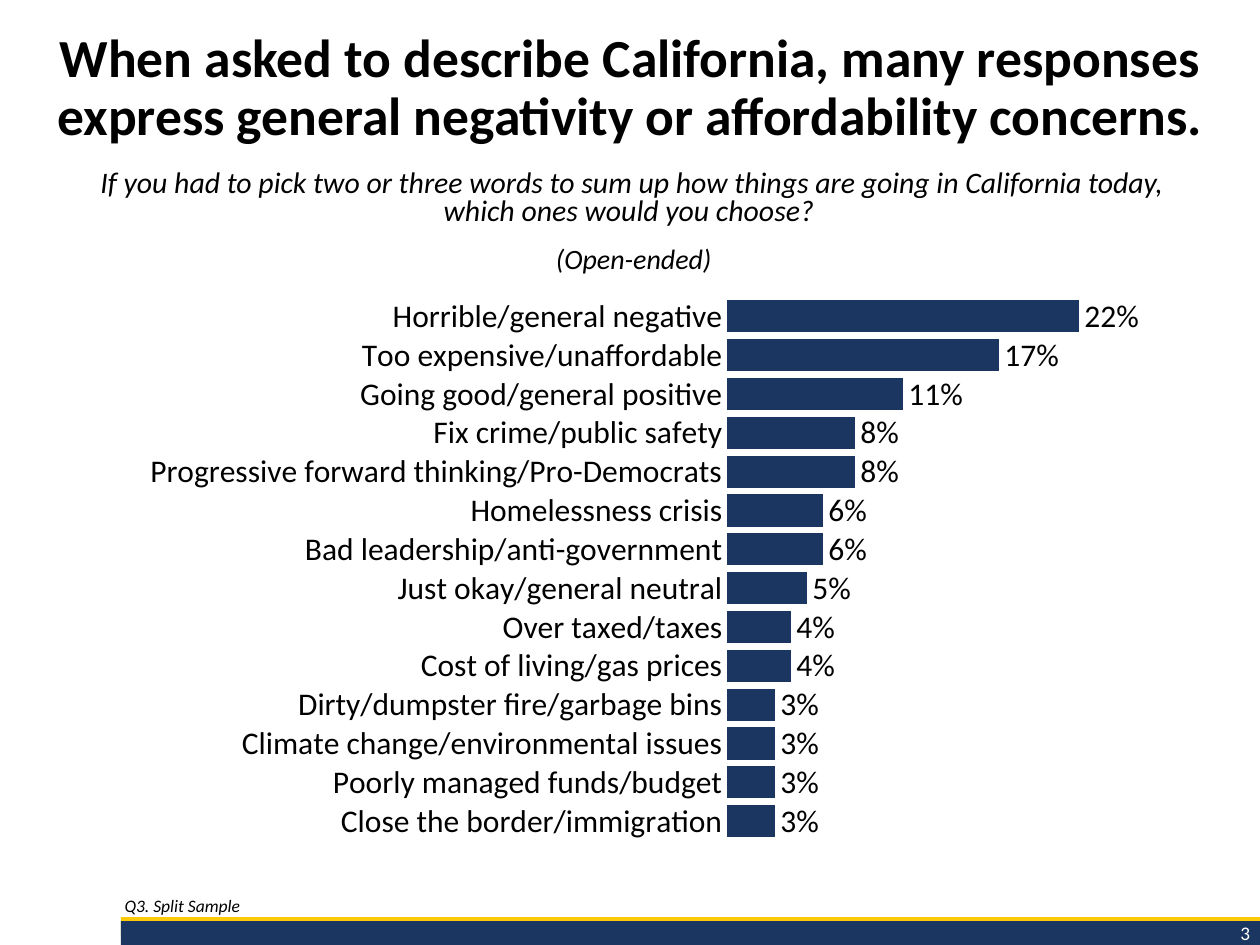
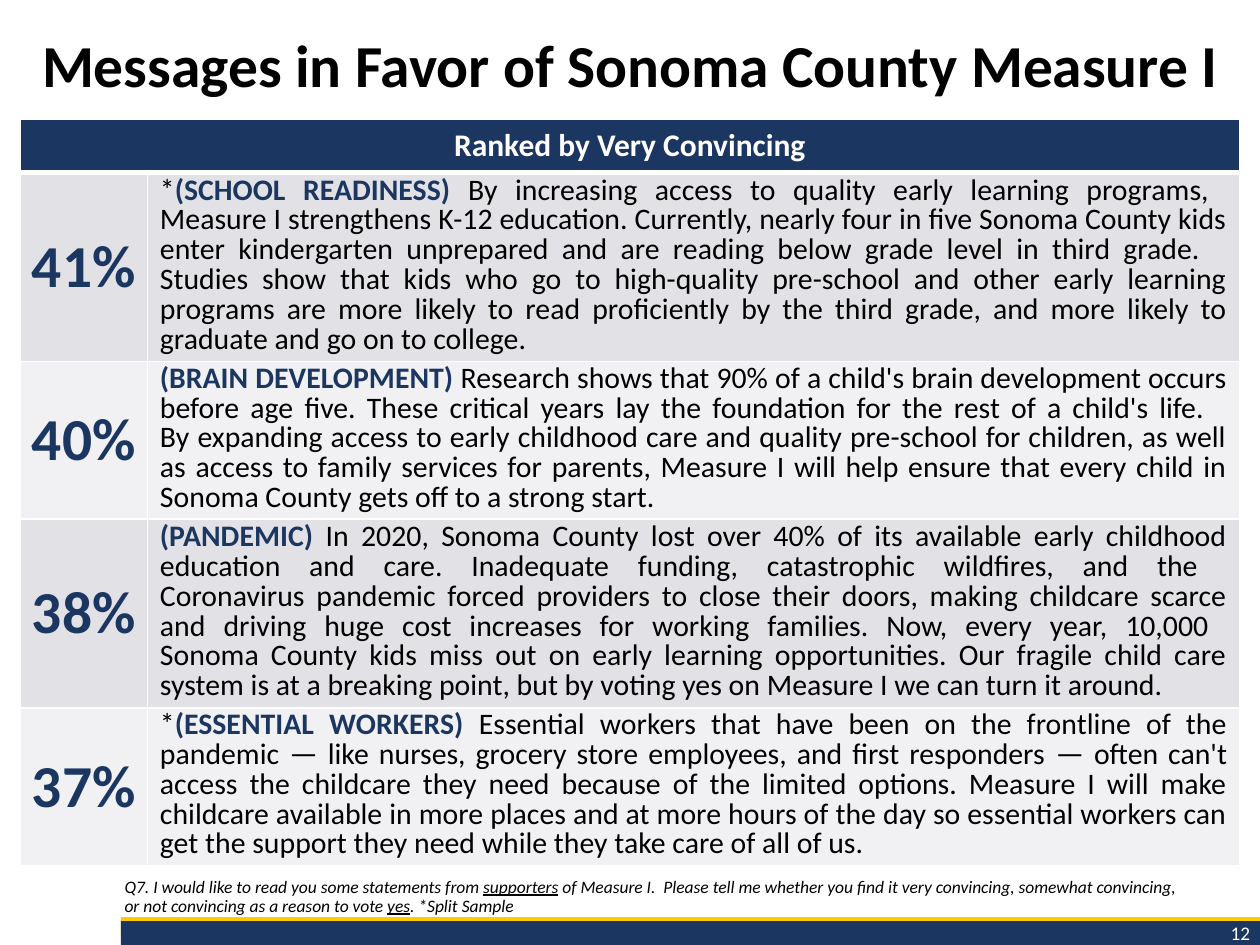
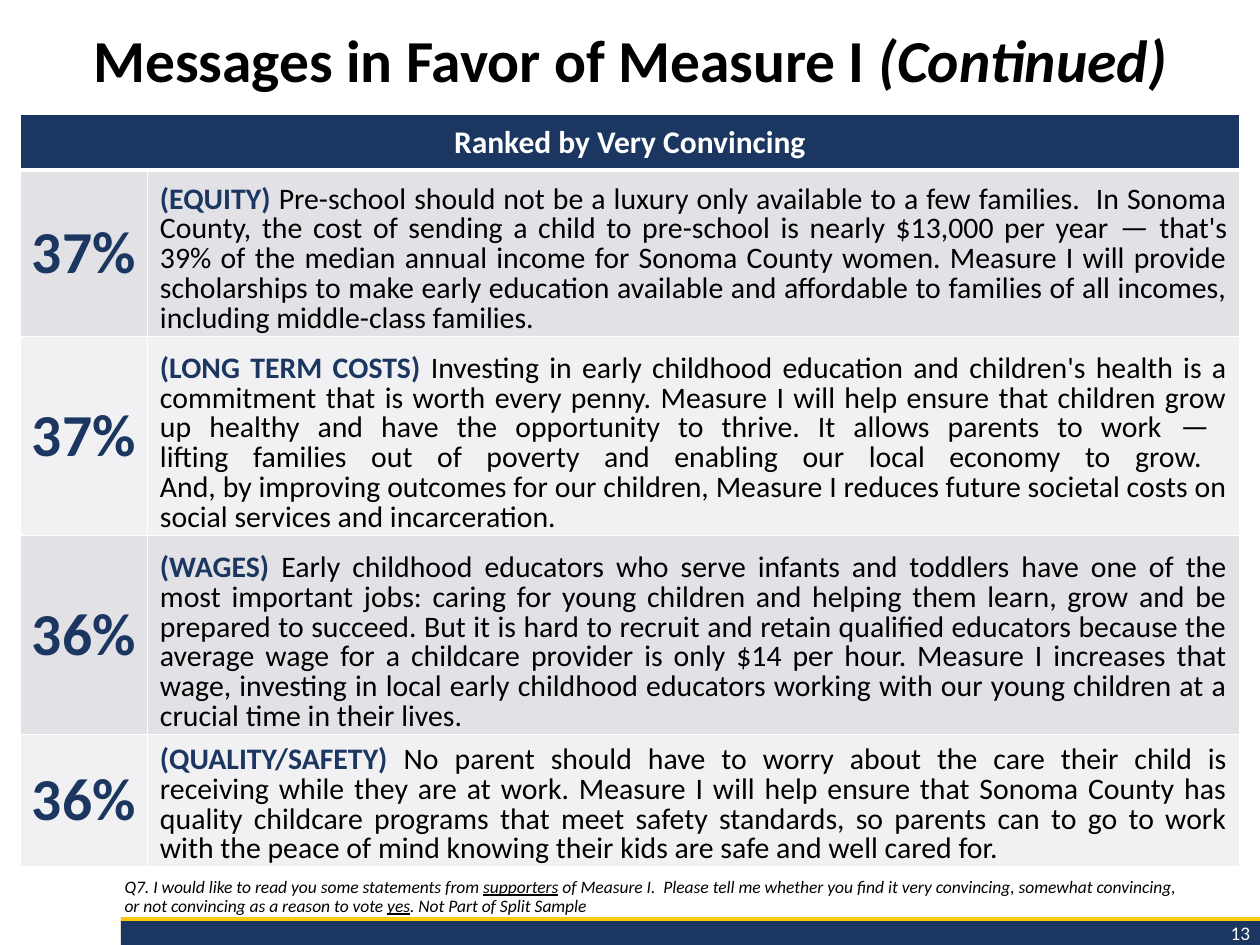
import lxml.etree
import pptx
import pptx.chart.data
import pptx.dml.color
import pptx.enum.chart
import pptx.enum.shapes
import pptx.enum.text
import pptx.oxml.ns
import pptx.util

Inches = pptx.util.Inches
Pt = pptx.util.Pt
qn = pptx.oxml.ns.qn
Align = pptx.enum.text.PP_ALIGN
Anchor = pptx.enum.text.MSO_ANCHOR

FONT = "Calibri"
NAVY, GOLD, BLACK, WHITE = "1B3660", "FCCA09", "000000", "FFFFFF"
EDGE, BAND = "284F8F", "1B3661"
STRIPES = ("E2E2E6", "F1F1F3")


def color(code):
    return pptx.dml.color.RGBColor.from_string(code)


def line(parent, tag, points, code):
    ln = lxml.etree.Element(qn(tag), w=str(Pt(points)))
    fill = lxml.etree.SubElement(ln, qn("a:solidFill"))
    lxml.etree.SubElement(fill, qn("a:srgbClr"), val=code)
    parent.append(ln)
    return ln


class Deck:
    def __init__(self):
        self.prs = pptx.Presentation()
        self.prs.slide_width = Inches(10)
        self.prs.slide_height = Inches(7.5)

    def start(self, number):
        self.slide = self.prs.slides.add_slide(self.prs.slide_layouts[6])
        self.bar(7.28, 0.16, GOLD)
        self.bar(7.31, 0.19, BAND)
        para = self.box(8.54, 7.26, 1.48, 0.29, Align.RIGHT)
        self.run(para, str(number), 11, WHITE)

    def bar(self, top, height, fill):
        kind = pptx.enum.shapes.MSO_SHAPE.RECTANGLE
        shape = self.slide.shapes.add_shape(kind, Inches(0.96), Inches(top), Inches(9.04), Inches(height))
        shape.shadow.inherit = False
        shape.fill.solid()
        shape.fill.fore_color.rgb = color(fill)
        shape.line.fill.background()

    def box(self, left, top, width, height, align, anchor=Anchor.TOP, space=None):
        shape = self.slide.shapes.add_textbox(Inches(left), Inches(top), Inches(width), Inches(height))
        frame = shape.text_frame
        frame.word_wrap = True
        frame.vertical_anchor = anchor
        para = frame.paragraphs[0]
        para.alignment = align
        para.line_spacing = space
        return para

    def run(self, para, text, size, ink=BLACK, bold=False, italic=False, under=False):
        for index, part in enumerate(text.split("\n")):
            if index:
                para.add_line_break()
            if not part:
                continue
            run = para.add_run()
            run.text = part
            font = run.font
            font.name, font.size = FONT, Pt(size)
            font.bold, font.italic, font.underline = bold, italic, under
            font.color.rgb = color(ink)
        return run

    def title(self, text, size, top=0.2, tail=""):
        para = self.box(0, top, 10, 1.22, Align.CENTER, space=0.9)
        self.run(para, text, size, bold=True)
        if tail:
            self.run(para, tail, size, bold=True, italic=True)

    def note(self, *parts):
        para = self.box(0.89, 6.78, 9.09, 0.54, Align.LEFT, Anchor.BOTTOM, 0.9)
        for index, part in enumerate(parts):
            self.run(para, part, 10, italic=True, under=index % 2 == 1)

    def prompt(self, text, left, top, size, space=None):
        para = self.box(left, top, 10, 0.5, Align.CENTER, space=space)
        self.run(para, text, size, italic=True)

    def chart(self, rows):
        data = pptx.chart.data.CategoryChartData(number_format="0%")
        data.categories = [name for name, _ in rows]
        data.add_series("Series 1", [share / 100 for _, share in rows])
        kind = pptx.enum.chart.XL_CHART_TYPE.BAR_CLUSTERED
        frame = self.slide.shapes.add_chart(kind, Inches(0), Inches(2.17), Inches(9.87), Inches(4.78), data)
        chart = frame.chart
        chart.has_legend = chart.has_title = False
        self.style(chart.font, 10)

        cats = chart.category_axis
        cats.reverse_order = True
        cats.major_tick_mark = cats.minor_tick_mark = pptx.enum.chart.XL_TICK_MARK.NONE
        cats.format.line.fill.background()
        self.style(cats.tick_labels.font, 18)

        vals = chart.value_axis
        vals.visible = vals.has_major_gridlines = False
        vals.minimum_scale, vals.maximum_scale, vals.major_unit = 0, 0.3, 0.15

        plot = chart.plots[0]
        plot.gap_width = 21
        plot.vary_by_categories = False
        fill = plot.series[0].format.fill
        fill.solid()
        fill.fore_color.rgb = color(NAVY)
        plot.has_data_labels = True
        labels = plot.data_labels
        labels.show_value = True
        labels.number_format, labels.number_format_is_linked = "0%", False
        labels.position = pptx.enum.chart.XL_LABEL_POSITION.OUTSIDE_END
        self.style(labels.font, 18)
        self.place(chart, 0.585, 0.039, 0.386, 0.903)

    def style(self, font, size):
        font.name, font.size = FONT, Pt(size)
        font.color.rgb = color(BLACK)

    def place(self, chart, left, top, width, height):
        area = chart.element.find(".//" + qn("c:plotArea"))
        layout = area.find(qn("c:layout"))
        if layout is None:
            layout = lxml.etree.Element(qn("c:layout"))
            area.insert(0, layout)
        manual = lxml.etree.SubElement(layout, qn("c:manualLayout"))
        pairs = (("layoutTarget", "inner"), ("xMode", "edge"), ("yMode", "edge"),
                 ("x", left), ("y", top), ("w", width), ("h", height))
        for tag, value in pairs:
            lxml.etree.SubElement(manual, qn("c:" + tag), val=str(value))

    def cell(self, cell, fill, align, anchor, pads, top=1, base=1):
        props = cell._tc.get_or_add_tcPr()
        for tag, points in (("a:lnL", 1), ("a:lnR", 1), ("a:lnT", top), ("a:lnB", base)):
            line(props, tag, points, WHITE)
        cell.fill.solid()
        cell.fill.fore_color.rgb = color(fill)
        cell.vertical_anchor = anchor
        side, over, under = map(Inches, pads)
        cell.margin_left = cell.margin_right = side
        cell.margin_top, cell.margin_bottom = over, under
        para = cell.text_frame.paragraphs[0]
        para.alignment = align
        return para

    def table(self, top, heights, rows, anchor):
        frame = self.slide.shapes.add_table(len(heights), 2, Inches(0.16), Inches(top),
                                            Inches(9.68), Inches(sum(heights)))
        table = frame.table
        table.horz_banding = False
        for column, width in zip(table.columns, (1.01, 8.67)):
            column.width = Inches(width)
        for row, height in zip(table.rows, heights):
            row.height = Inches(height)

        table.cell(0, 0).merge(table.cell(0, 1))
        heads = [self.cell(table.cell(0, col), NAVY, Align.CENTER, Anchor.MIDDLE,
                           (0.01, 0.05, 0.05), base=3) for col in (0, 1)]
        self.run(heads[0], "Ranked by Very Convincing", 18, WHITE, bold=True)

        for index, (share, star, topic, text) in enumerate(rows):
            fill = STRIPES[index % 2]
            rule = 1 if index else 3
            left, right = table.cell(index + 1, 0), table.cell(index + 1, 1)
            para = self.cell(left, fill, Align.CENTER, Anchor.MIDDLE, (0.01, 0, 0), rule)
            run = self.run(para, f"{share}%", 34, NAVY, bold=True)
            props = run.font._element
            props.insert(0, line(props, "a:ln", 0.75, EDGE))
            para = self.cell(right, fill, Align.JUSTIFY, anchor, (0.1, 0.01, 0), rule)
            para.line_spacing = Pt(17)
            if star:
                self.run(para, star, 17)
            self.run(para, f"({topic}) ", 17, NAVY, bold=True)
            for spot, part in enumerate(text.split("—")):
                if spot:
                    self.run(para, "—", 18)
                self.run(para, part, 17)


WORDS = [
    ("Horrible/general negative", 22),
    ("Too expensive/unaffordable", 17),
    ("Going good/general positive", 11),
    ("Fix crime/public safety", 8),
    ("Progressive forward thinking/Pro-Democrats", 8),
    ("Homelessness crisis", 6),
    ("Bad leadership/anti-government", 6),
    ("Just okay/general neutral", 5),
    ("Over taxed/taxes", 4),
    ("Cost of living/gas prices", 4),
    ("Dirty/dumpster fire/garbage bins", 3),
    ("Climate change/environmental issues", 3),
    ("Poorly managed funds/budget", 3),
    ("Close the border/immigration", 3),
]

FIRST = [
    (41, "*", "SCHOOL READINESS",
     "By increasing access to quality early learning programs, \n"
     "Measure I strengthens K-12 education. Currently, nearly four in five Sonoma County kids "
     "enter kindergarten unprepared and are reading below grade level in third grade.  \n"
     "Studies show that kids who go to high-quality pre-school and other early learning programs "
     "are more likely to read proficiently by the third grade, and more likely to graduate and "
     "go on to college."),
    (40, "", "BRAIN DEVELOPMENT",
     "Research shows that 90% of a child's brain development occurs before age five. These "
     "critical years lay the foundation for the rest of a child's life.  \n"
     "By expanding access to early childhood care and quality pre-school for children, as well "
     "as access to family services for parents, Measure I will help ensure that every child in "
     "Sonoma County gets off to a strong start."),
    (38, "", "PANDEMIC",
     "In 2020, Sonoma County lost over 40% of its available early childhood education and care. "
     "Inadequate funding, catastrophic wildfires, and the \n"
     "Coronavirus pandemic forced providers to close their doors, making childcare scarce and "
     "driving huge cost increases for working families. Now, every year, 10,000 \n"
     "Sonoma County kids miss out on early learning opportunities. Our fragile child care system "
     "is at a breaking point, but by voting yes on Measure I we can turn it around."),
    (37, "*", "ESSENTIAL WORKERS",
     "Essential workers that have been on the frontline of the pandemic — like nurses, grocery "
     "store employees, and first responders — often can't access the childcare they need because "
     "of the limited options. Measure I will make childcare available in more places and at more "
     "hours of the day so essential workers can get the support they need while they take care "
     "of all of us."),
]

SECOND = [
    (37, "", "EQUITY",
     "Pre-school should not be a luxury only available to a few families.  In Sonoma County, the "
     "cost of sending a child to pre-school is nearly $13,000 per year — that's 39% of the median "
     "annual income for Sonoma County women. Measure I will provide scholarships to make early "
     "education available and affordable to families of all incomes, including middle-class "
     "families. "),
    (37, "", "LONG TERM COSTS",
     "Investing in early childhood education and children's health is a commitment that is worth "
     "every penny. Measure I will help ensure that children grow up healthy and have the "
     "opportunity to thrive. It allows parents to work — \n"
     "lifting families out of poverty and enabling our local economy to grow. \n"
     "And, by improving outcomes for our children, Measure I reduces future societal costs on "
     "social services and incarceration."),
    (36, "", "WAGES",
     "Early childhood educators who serve infants and toddlers have one of the most important "
     "jobs: caring for young children and helping them learn, grow and be prepared to succeed. "
     "But it is hard to recruit and retain qualified educators because the average wage for a "
     "childcare provider is only $14 per hour. Measure I increases that wage, investing in local "
     "early childhood educators working with our young children at a crucial time in their lives."),
    (36, "", "QUALITY/SAFETY",
     "No parent should have to worry about the care their child is receiving while they are at "
     "work. Measure I will help ensure that Sonoma County has quality childcare programs that "
     "meet safety standards, so parents can to go to work with the peace of mind knowing their "
     "kids are safe and well cared for."),
]

ASK = (
    "Q7. I would like to read you some statements from ",
    "supporters",
    " of Measure I.  Please tell me whether you find it very convincing, somewhat convincing, \n"
    "or not convincing as a reason to vote ",
    "yes",
)


def main():
    deck = Deck()

    deck.start(3)
    deck.title("When asked to describe California, many responses express general negativity "
               "or affordability concerns.", 30.6)
    deck.note("Q3. Split Sample")
    deck.prompt("If you had to pick two or three words to sum up how things are going in "
                "California today,\nwhich ones would you choose? ", 0.02, 1.31, 17, Pt(16))
    deck.chart(WORDS)
    deck.prompt("(Open-ended)", 0.03, 1.87, 16)

    deck.start(12)
    deck.table(0.95, (0.42, 1.5, 1.25, 1.5, 1.25), FIRST, Anchor.MIDDLE)
    deck.note(*ASK, ". *Split Sample")
    deck.title("Messages in Favor of Sonoma County Measure I", 34, top=0.24)

    deck.start(13)
    deck.table(0.91, (0.44, 1.32, 1.58, 1.58, 1.05), SECOND, Anchor.BOTTOM)
    deck.note(*ASK, ". Not Part of Split Sample")
    deck.title("Messages in Favor of Measure I ", 34, tail="(Continued)")

    deck.prs.save("out.pptx")


if __name__ == "__main__":
    main()
